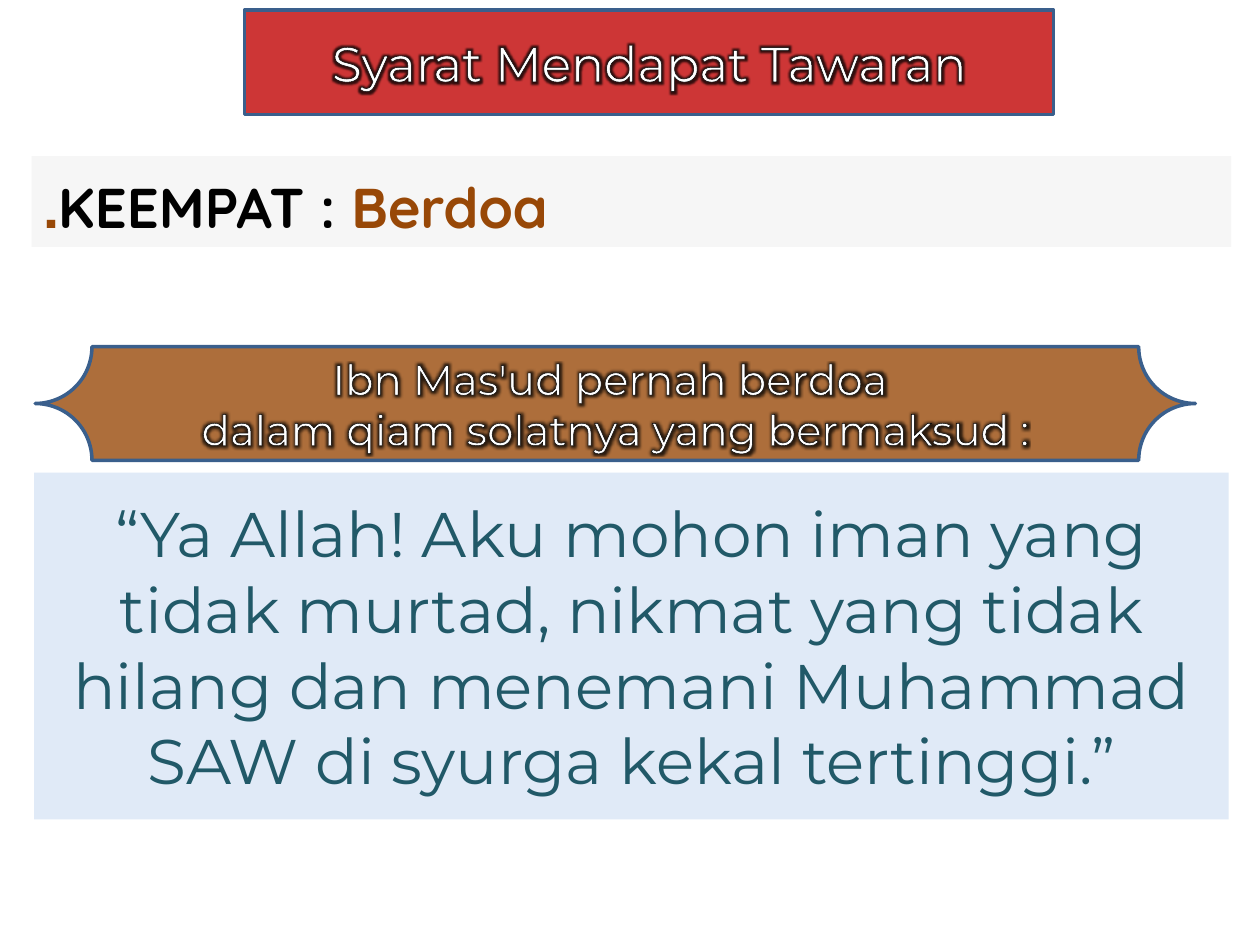
from pptx import Presentation
from pptx.dml.color import RGBColor
from pptx.enum.shapes import MSO_SHAPE
from pptx.enum.text import MSO_ANCHOR, MSO_AUTO_SIZE, PP_ALIGN
from pptx.oxml import parse_xml
from pptx.oxml.ns import nsdecls
from pptx.util import Cm, Pt

COLORS = {
    "red": "C00000", "brown": "984807", "edge": "3A5F8C",
    "gray": "F2F2F2", "sky": "C6D9F1", "teal": "215968",
    "white": "FFFFFF", "black": "000000",
}


def rgb(name):
    return RGBColor.from_string(COLORS[name])


def place(shape, box):
    shape.left, shape.top, shape.width, shape.height = map(Cm, box)


def paint(shape, color, alpha):
    """Fill with a colour at alpha percent opacity."""
    shape.shadow.inherit = False
    shape.fill.solid()
    shape.fill.fore_color.rgb = rgb(color)
    tint = shape.fill._xPr.solidFill[0]
    tint.append(parse_xml(f'<a:alpha {nsdecls("a")} val="{alpha * 1000}"/>'))


def panel(slide, box, color, alpha):
    shape = slide.shapes.add_shape(MSO_SHAPE.RECTANGLE, *map(Cm, box))
    paint(shape, color, alpha)
    shape.line.fill.background()
    shape.text_frame.word_wrap = True
    return shape


def frame(shape, color, notch):
    """Finish a plaque: fill, border and corner depth."""
    shape.adjustments[0] = notch
    paint(shape, color, 79)
    shape.line.color.rgb = rgb("edge")
    shape.line.width = Pt(2)
    shape.text_frame.word_wrap = True
    shape.text_frame.vertical_anchor = MSO_ANCHOR.MIDDLE


def add_run(para, text, size, color, font="Montserrat", bold=False):
    run = para.add_run()
    run.text = text
    run.font.size = Pt(size)
    run.font.name = font
    run.font.bold = bold
    run.font.color.rgb = rgb(color)
    return run


def glow_run(para, text, size):
    """White text with a thin black outline and a dark glow."""
    props = add_run(para, text, size, "white")._r.get_or_add_rPr()
    black = f'<a:srgbClr val="{COLORS["black"]}"'
    props.insert(0, parse_xml(
        f'<a:ln {nsdecls("a")} w="9525"><a:solidFill>{black}/>'
        '</a:solidFill></a:ln>'))
    props.insert(2, parse_xml(
        f'<a:effectLst {nsdecls("a")}><a:glow rad="63500">{black}>'
        '<a:alpha val="75000"/></a:srgbClr></a:glow></a:effectLst>'))


def add_title(slide):
    title = slide.shapes.title
    place(title, (4.93, 0.2, 16.31, 2.11))
    title.element.spPr.append(parse_xml(
        f'<a:prstGeom {nsdecls("a")} prst="plaque"><a:avLst/></a:prstGeom>'))
    frame(title, "red", 0.3)
    para = title.text_frame.paragraphs[0]
    para.alignment = PP_ALIGN.CENTER
    glow_run(para, "Syarat Mendapat Tawaran", 28)


def add_head(slide):
    shape = panel(slide, (0.64, 3.15, 24.18, 1.83), "gray", 69)
    text = shape.text_frame
    text.auto_size = MSO_AUTO_SIZE.SHAPE_TO_FIT_TEXT
    text.vertical_anchor = MSO_ANCHOR.TOP
    para = text.paragraphs[0]
    para.alignment = PP_ALIGN.LEFT
    para._p.get_or_add_pPr().set("rtl", "1")
    para.line_spacing = 1.15
    para.space_after = Pt(8)
    add_run(para, "KEEMPAT :", 32, "black", "Quicksand", True)
    add_run(para, " Berdoa.", 32, "brown", "Quicksand", True)


def add_intro(slide):
    box = map(Cm, (0.71, 6.99, 23.39, 2.29))
    shape = slide.shapes.add_shape(MSO_SHAPE.PLAQUE, *box)
    frame(shape, "brown", 0.5)
    text = shape.text_frame
    lines = ("Ibn Mas'ud pernah berdoa ",
             "dalam qiam solatnya yang bermaksud :")
    for i, line in enumerate(lines):
        para = text.add_paragraph() if i else text.paragraphs[0]
        para.alignment = PP_ALIGN.CENTER
        glow_run(para, line, 24)


def add_quote(slide):
    shape = panel(slide, (0.69, 9.53, 24.08, 6.99), "sky", 53)
    shape.text_frame.vertical_anchor = MSO_ANCHOR.MIDDLE
    para = shape.text_frame.paragraphs[0]
    para.alignment = PP_ALIGN.CENTER
    add_run(para, "“Ya Allah! Aku mohon iman yang tidak murtad, nikmat yang "
            "tidak hilang dan menemani Muhammad SAW di syurga kekal "
            "tertinggi.”", 36, "teal")


def main():
    deck = Presentation()
    deck.slide_width, deck.slide_height = Cm(25.4), Cm(19.05)
    slide = deck.slides.add_slide(deck.slide_layouts[5])
    # Title plaque and heading band
    add_title(slide)
    add_head(slide)
    # Prayer: lead-in plaque and quote
    add_intro(slide)
    add_quote(slide)
    deck.save("out.pptx")


if __name__ == "__main__":
    main()
